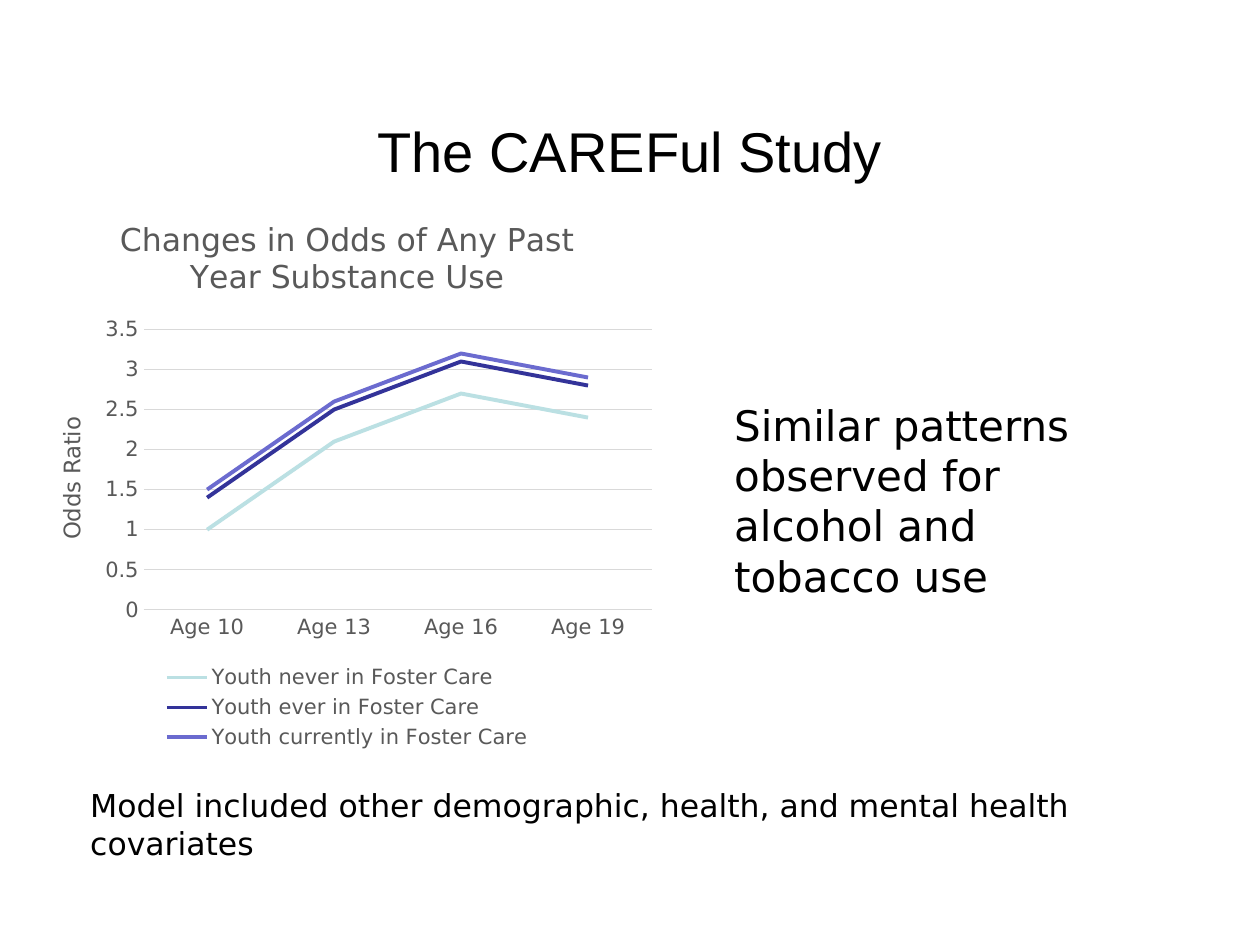
from dataclasses import dataclass

from pptx import Presentation
from pptx.chart.data import CategoryChartData
from pptx.dml.color import RGBColor
from pptx.enum.chart import XL_CHART_TYPE, XL_LEGEND_POSITION, XL_TICK_MARK
from pptx.enum.text import MSO_ANCHOR, PP_ALIGN
from pptx.util import Cm, Pt

BODY_FONT = "DejaVu Sans"
BLACK = "000000"
GRAY = "595959"
GRID = "D9D9D9"


@dataclass
class Caption:
    text: str
    left: float
    top: float
    width: float
    height: float
    size: int
    font: str = BODY_FONT
    align: PP_ALIGN = PP_ALIGN.LEFT
    anchor: MSO_ANCHOR = MSO_ANCHOR.TOP


@dataclass
class Group:
    name: str
    odds: tuple[float, ...]
    color: str


CAPTIONS = [
    Caption("The CAREFul Study", 1.27, 2.11, 22.86, 1.83, 32, "Arial",
            PP_ALIGN.CENTER, MSO_ANCHOR.MIDDLE),
    Caption("Model included other demographic, health, and mental health covariates",
            1.57, 15.72, 21.95, 1.02, 18),
    Caption("Similar patterns observed for alcohol and tobacco use",
            14.55, 7.92, 8.97, 3.33, 24),
]
AGES = ["Age 10", "Age 13", "Age 16", "Age 19"]
GROUPS = [
    Group("Youth never in Foster Care", (1, 2.1, 2.7, 2.4), "BBE0E3"),
    Group("Youth ever in Foster Care", (1.4, 2.5, 3.1, 2.8), "333399"),
    Group("Youth currently in Foster Care", (1.5, 2.6, 3.2, 2.9), "6B6BCF"),
]


def rgb(color: str) -> RGBColor:
    return RGBColor.from_string(color)


def style_font(font, size: float, color: str, name: str = BODY_FONT) -> None:
    font.name = name
    font.size = Pt(size)
    font.bold = False
    font.color.rgb = rgb(color)


def style_line(line, color: str, width: float) -> None:
    line.color.rgb = rgb(color)
    line.width = Pt(width)


def add_caption(slide, caption: Caption) -> None:
    box = slide.shapes.add_textbox(Cm(caption.left), Cm(caption.top),
                                   Cm(caption.width), Cm(caption.height))
    frame = box.text_frame
    frame.word_wrap = True
    frame.vertical_anchor = caption.anchor
    paragraph = frame.paragraphs[0]
    paragraph.text = caption.text
    paragraph.alignment = caption.align
    style_font(paragraph.font, caption.size, BLACK, caption.font)


def set_title(title, text: str, size: float) -> None:
    paragraph = title.text_frame.paragraphs[0]
    paragraph.text = text
    style_font(paragraph.font, size, GRAY)


def add_odds_chart(slide, groups: list[Group]) -> None:
    odds_data = CategoryChartData()
    odds_data.categories = AGES
    for group in groups:
        odds_data.add_series(group.name, group.odds)
    chart = slide.shapes.add_chart(XL_CHART_TYPE.LINE, Cm(0.61), Cm(3.94),
                                   Cm(12.78), Cm(11.28), odds_data).chart
    style_font(chart.font, 10, BLACK)
    chart.has_title = True
    set_title(chart.chart_title, "Changes in Odds of Any Past Year Substance Use", 18)
    chart.chart_title.include_in_layout = False

    chart.has_legend = True
    chart.legend.position = XL_LEGEND_POSITION.BOTTOM
    chart.legend.include_in_layout = False
    style_font(chart.legend.font, 12, GRAY)

    ages, odds = chart.category_axis, chart.value_axis
    for axis in (ages, odds):
        axis.major_tick_mark = XL_TICK_MARK.NONE
        axis.minor_tick_mark = XL_TICK_MARK.NONE
        style_font(axis.tick_labels.font, 12, GRAY)
    style_line(ages.format.line, GRID, 0.75)
    odds.format.line.fill.background()
    odds.minimum_scale, odds.maximum_scale, odds.major_unit = 0, 3.5, 0.5
    odds.has_major_gridlines = True
    style_line(odds.major_gridlines.format.line, GRID, 0.75)
    set_title(odds.axis_title, "Odds Ratio", 13)

    plot = chart.plots[0]
    plot.vary_by_categories = False
    for series, group in zip(plot.series, groups):
        series.smooth = False
        style_line(series.format.line, group.color, 2.25)


def main() -> None:
    presentation = Presentation()
    presentation.slide_width, presentation.slide_height = Cm(25.4), Cm(19.05)
    slide = presentation.slides.add_slide(presentation.slide_layouts[6])
    for caption in CAPTIONS:
        add_caption(slide, caption)
    add_odds_chart(slide, GROUPS)
    presentation.save("out.pptx")


if __name__ == "__main__":
    main()
